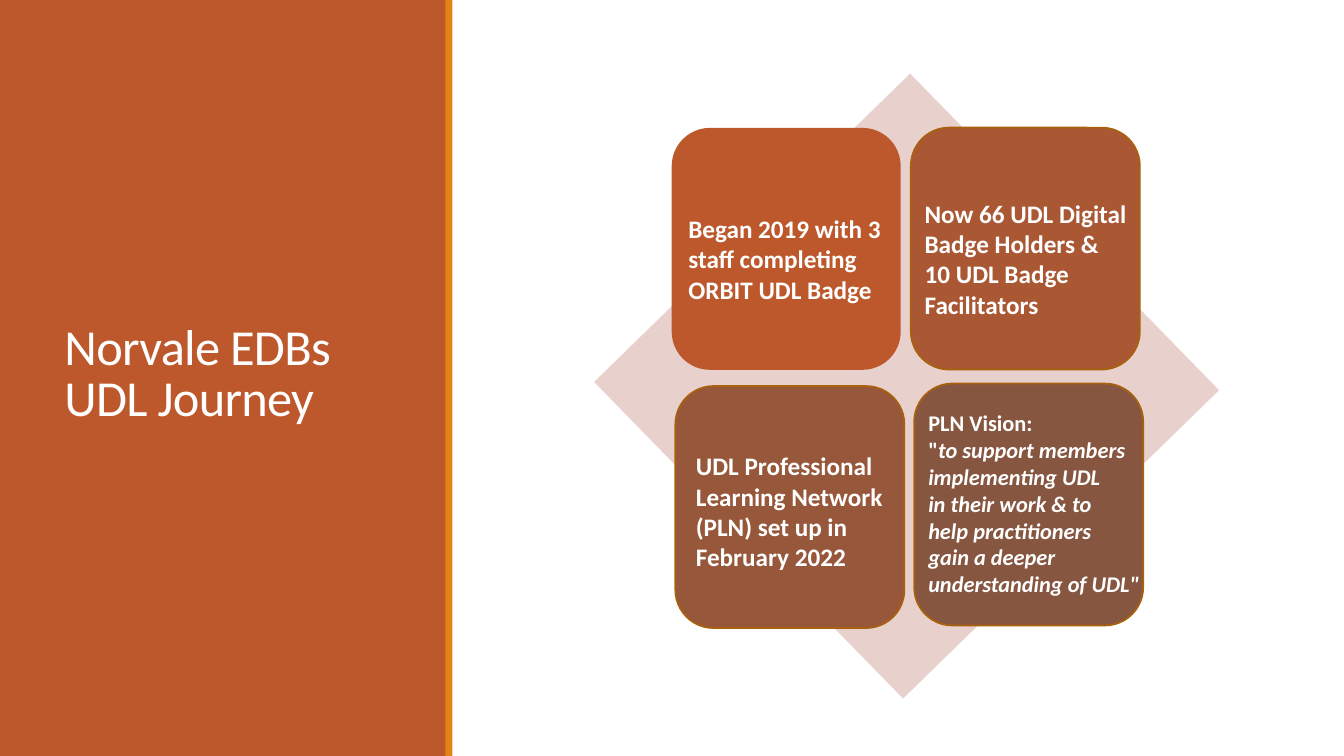
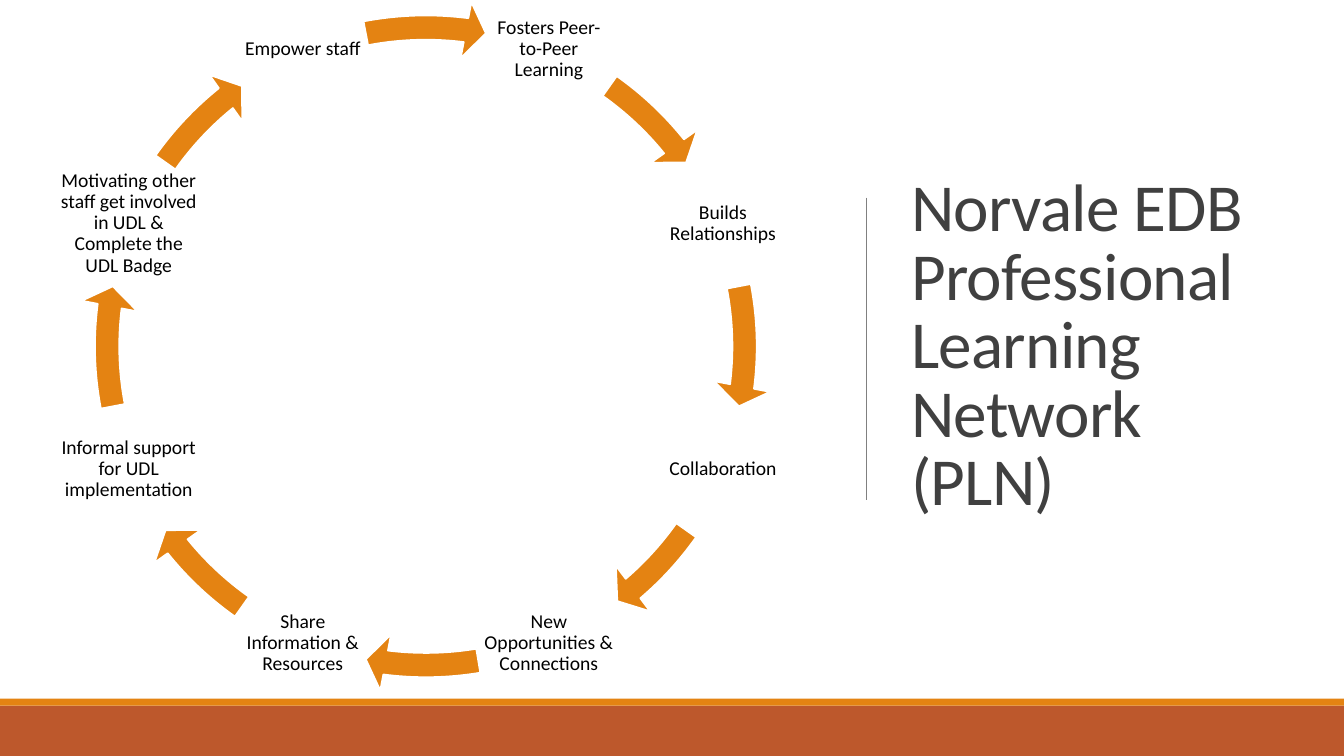
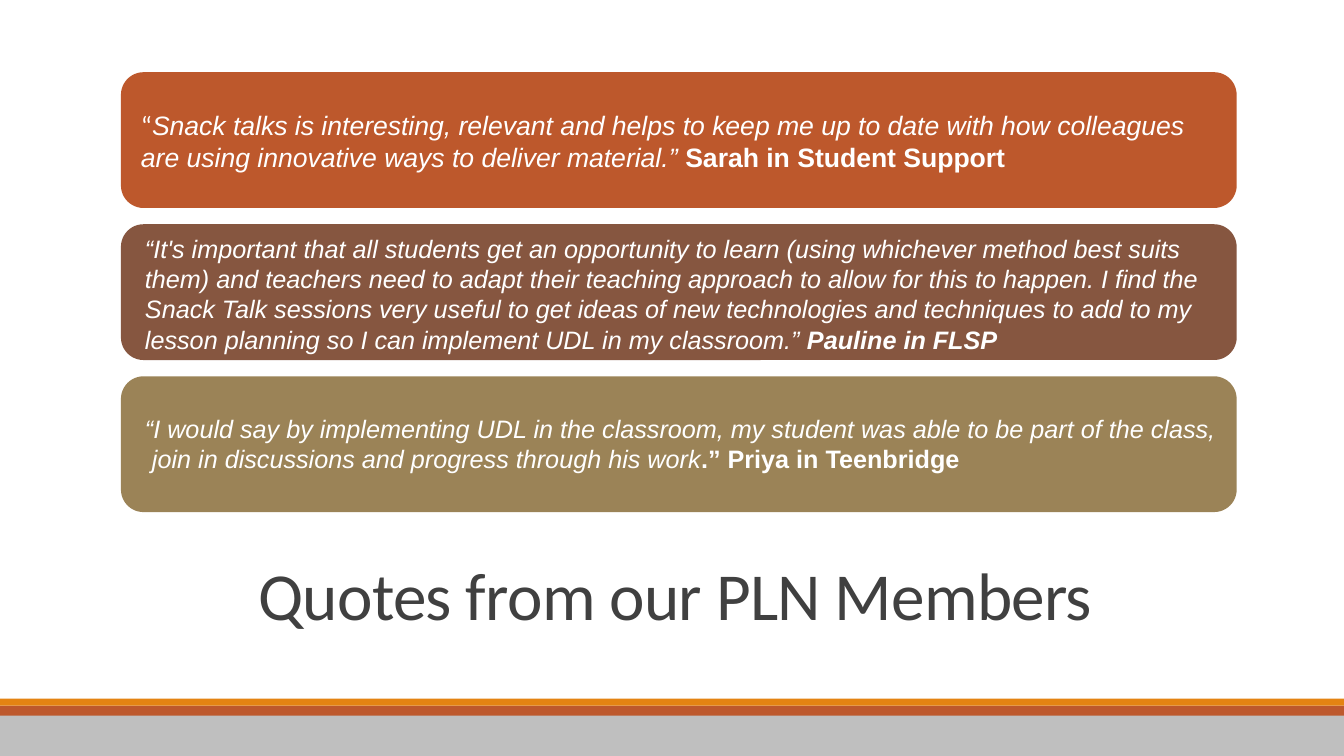
import math
from pptx import Presentation
from pptx import util as u
from pptx.dml.color import RGBColor
from pptx.enum import shapes, text
from pptx.oxml.ns import qn
from lxml import etree

HUES = {
    "rust": "BD582C", "gold": "E48312", "grey": "BFBFBF", "rule": "808080",
    "white": "FFFFFF", "black": "000000", "dark": "404040", "pink": "E8D1CD",
    "edge": "A9610D", "clay": "AA5834", "brick": "97573A", "brown": "865640",
    "olive": "9B8357",
}
WIDE, HIGH = 960, 540
KIND = shapes.MSO_SHAPE
LEFT, MID = text.PP_ALIGN.LEFT, text.PP_ALIGN.CENTER
TOP, CORE = text.MSO_ANCHOR.TOP, text.MSO_ANCHOR.MIDDLE


def hue(name):
    return RGBColor.from_string(HUES[name])


def write(frame, paras, size=18, font="Calibri", color="white", bold=False,
          slant=False, align=LEFT, lead=None, track=None):
    for i, runs in enumerate(paras):
        para = frame.paragraphs[0] if i == 0 else frame.add_paragraph()
        para.alignment = align
        if lead:
            para.line_spacing = lead
        for run in [runs] if isinstance(runs, str) else runs:
            words, look = (run, {}) if isinstance(run, str) else run
            part = para.add_run()
            part.text = words
            part.font.size = u.Pt(size)
            part.font.name = look.get("font", font)
            part.font.bold = look.get("bold", bold)
            part.font.italic = look.get("slant", slant)
            part.font.color.rgb = hue(color)
            if track:
                part.font._element.set("spc", str(track))


class Deck:
    def __init__(self):
        self.show = Presentation()
        self.show.slide_width = u.Pt(WIDE)
        self.show.slide_height = u.Pt(HIGH)
        self.page = None

    def new(self):
        self.page = self.show.slides.add_slide(self.show.slide_layouts[6])

    def shape(self, kind, x, y, w, h, fill, edge=None, turn=0, adj=()):
        item = self.page.shapes.add_shape(kind, u.Pt(x), u.Pt(y), u.Pt(w), u.Pt(h))
        item.shadow.inherit = False
        item.fill.solid()
        item.fill.fore_color.rgb = hue(fill)
        if edge:
            item.line.color.rgb = hue(edge)
            item.line.width = u.Pt(1.25)
        else:
            item.line.fill.background()
        item.rotation = turn
        for i, value in enumerate(adj):
            item.adjustments[i] = value

    def label(self, x, y, w, h, paras, anchor=TOP, inset=None, **look):
        frame = self.page.shapes.add_textbox(
            u.Pt(x), u.Pt(y), u.Pt(w), u.Pt(h)).text_frame
        frame.word_wrap = True
        frame.vertical_anchor = anchor
        if inset is not None:
            frame.margin_left = frame.margin_right = u.Pt(inset)
            frame.margin_top = frame.margin_bottom = u.Pt(inset)
        write(frame, paras, **look)

    def title(self, x, y, w, h, words, size=48, color="dark", align=LEFT):
        self.label(x, y, w, h, [words], anchor=CORE, size=size, color=color,
                   align=align, lead=0.85, track=-50)

    def line(self, x1, y1, x2, y2):
        item = self.page.shapes.add_connector(
            shapes.MSO_CONNECTOR.STRAIGHT, u.Pt(x1), u.Pt(y1), u.Pt(x2), u.Pt(y2))
        item.line.color.rgb = hue("rule")
        item.line.width = u.Pt(0.5)
        etree.SubElement(item._element.spPr, qn("a:effectLst"))

    def bands(self, grey=False):
        self.shape(KIND.RECTANGLE, 0, 504, WIDE, 36, "rust")
        self.shape(KIND.RECTANGLE, 0, 499, WIDE, 5, "gold")
        if grey:
            self.shape(KIND.RECTANGLE, 0, 511.2, WIDE, 28.8, "grey")


def journey(deck):
    deck.new()
    deck.shape(KIND.RECTANGLE, 0, 0, 319, HIGH, "rust")
    deck.title(39, 41, 242.6, 454.3, "Norvale EDBs UDL Journey", 36, "white")
    deck.shape(KIND.RECTANGLE, 318.2, 0, 5, HIGH, "gold")
    deck.shape(KIND.RECTANGLE, 489.6, 118.1, 316, 315.4, "pink", turn=45.7)
    tiles = [(479.8, 91.4, "rust", None), (650.6, 91.2, "clay", "edge"),
             (482.4, 275.8, "brick", "edge"), (653, 274, "brown", "edge")]
    for x, y, fill, edge in tiles:
        deck.shape(KIND.ROUNDED_RECTANGLE, x, y, 163.6, 172.8, fill, edge)
    tilt = {"slant": True}
    vision = ["PLN Vision:", ['"', ("to support members", tilt)]]
    vision += [[(row, tilt)] for row in (
        "implementing UDL", "in their work & to", "help practitioners",
        "gain a deeper", 'understanding of UDL"')]
    notes = [
        (484.6, 149, 18, ["Began 2019 with 3", "staff completing", "ORBIT UDL Badge"]),
        (653.4, 138, 18, ["Now 66 UDL Digital", "Badge Holders &",
                          "10 UDL Badge", "Facilitators"]),
        (490, 318.4, 18, ["UDL Professional", "Learning Network",
                          "(PLN) set up in", "February 2022"]),
        (656, 288.7, 16, vision),
    ]
    for x, y, size, rows in notes:
        deck.label(x, y, 180, 20 * len(rows), rows, size=size, bold=True)


def network(deck):
    deck.new()
    deck.title(643.7, 49.7, 265.7, 398.2,
               "Norvale EDB Professional Learning Network (PLN)")
    deck.line(618.5, 141.1, 618.5, 357.1)
    deck.bands()
    cx, cy, reach, ring, tall = 304.2, 247.4, 229.7, 496, 89.4
    steps = [
        ("Fosters Peer-to-Peer Learning", 89.4, 305.24, 321.14),
        ("Builds Relationships", 89.4, 349.14, 7.24),
        ("Collaboration", 89.4, 35.24, 49.46),
        ("New Opportunities & Connections", 100, 80.53, 97.24),
        ("Share Information & Resources", 89.4, 125.24, 141.14),
        ("Informal support for UDL implementation", 109.4, 169.14, 187.24),
        ("Motivating other staff get involved in UDL & Complete the UDL Badge",
         104.4, 215.24, 231.14),
        ("Empower staff", 89.4, 259.14, 277.24),
    ]
    for i, (words, w, start, end) in enumerate(steps):
        turn = math.radians(45 * i - 67.5)
        x, y = cx + reach * math.cos(turn), cy + reach * math.sin(turn)
        deck.label(x - w / 2, y - tall / 2, w, tall, [words], anchor=CORE,
                   inset=1.4, size=14, color="black", align=MID, lead=0.9)
        deck.shape(KIND.CIRCULAR_ARROW, cx - ring / 2, cy - ring / 2, ring, ring,
                   "gold", "white", adj=(0.035, 2.17, end * 0.6, start * 0.6, 0.041))


def quotes(deck):
    deck.new()
    deck.bands(grey=True)
    deck.title(86.4, 381.6, 792, 93.6, "Quotes from our PLN Members", align=MID)
    strong = {"bold": True, "slant": False}
    cards = [
        ("rust", 93.6, 23, 19, [
            [("“", {"font": "Calibri", "slant": False}),
             "Snack talks is interesting, relevant and helps to keep me up to date "
             "with how colleagues"],
            ["are using innovative ways to deliver material.” ",
             ("Sarah in Student Support", strong)]]),
        ("brown", 96.5, 2.9, 18, [
            "“It's important that all students get an opportunity to learn "
            "(using whichever method best suits",
            "them) and teachers need to adapt their teaching approach to allow "
            "for this to happen. I find the",
            "Snack Talk sessions very useful to get ideas of new technologies "
            "and techniques to add to my",
            ["lesson planning so I can implement UDL in my classroom.” ",
             ("Pauline in FLSP", {"bold": True})]]),
        ("olive", 96.5, 23, 18, [
            "“I would say by implementing UDL in the classroom, my student was "
            "able to be part of the class,",
            [" join in discussions and progress through his work",
             (".” Priya in Teenbridge", strong)]]),
    ]
    for i, (fill, x, drop, size, rows) in enumerate(cards):
        y = 51.6 + 108.6 * i
        deck.shape(KIND.ROUNDED_RECTANGLE, 86.4, y, 797, 97, fill)
        deck.label(x, y + drop, 800, 22 * len(rows), rows, size=size,
                   font="Arial", slant=True)


def main():
    deck = Deck()
    journey(deck)
    network(deck)
    quotes(deck)
    deck.show.save("out.pptx")


if __name__ == "__main__":
    main()
